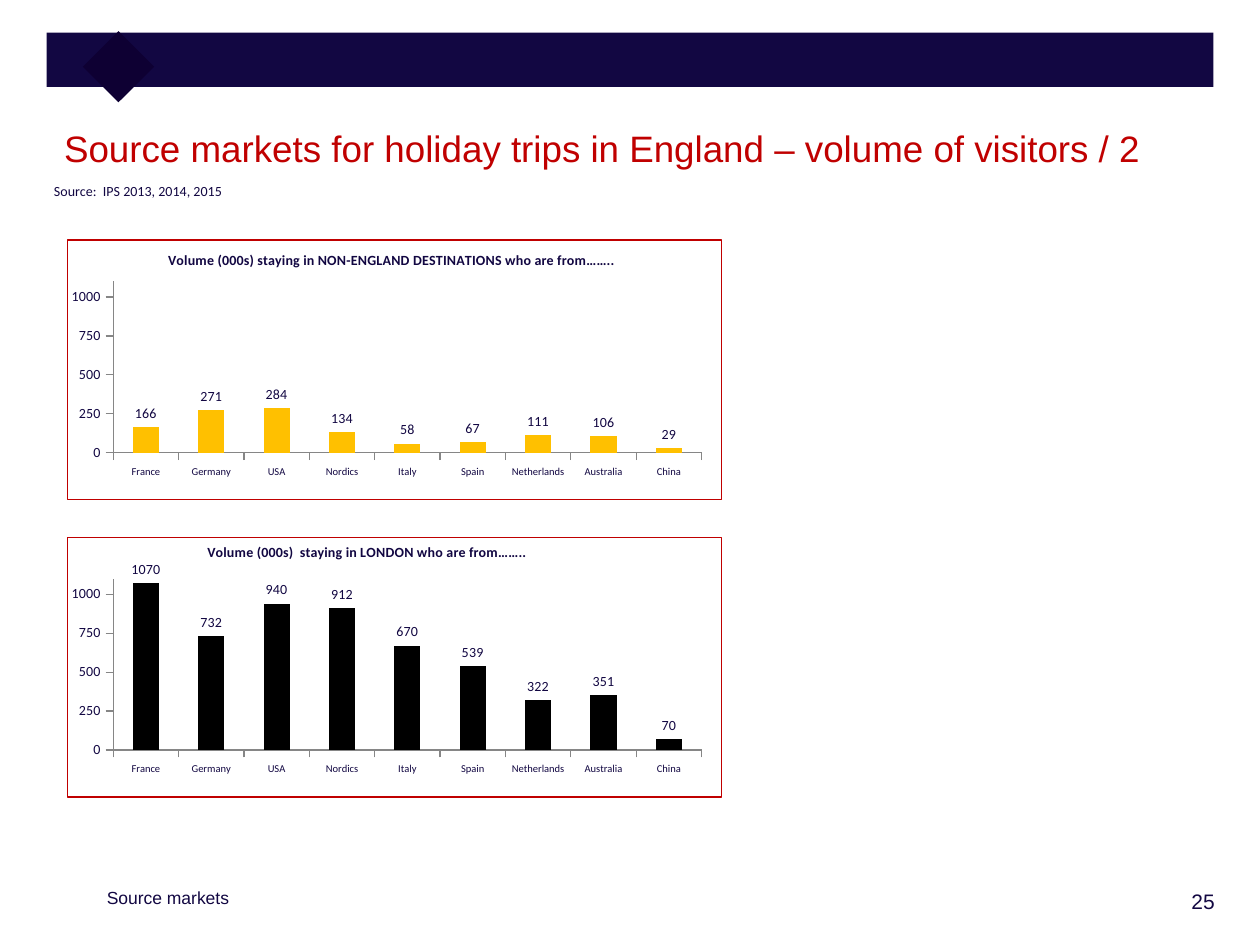
from lxml import etree
from pptx import Presentation
from pptx.chart.data import CategoryChartData
from pptx.dml.color import RGBColor
from pptx.enum import chart as charts, shapes, text
from pptx.oxml import parse_xml
from pptx.oxml.ns import nsdecls, qn
from pptx.util import Inches, Pt

NAVY = RGBColor(0x12, 0x07, 0x42)
DARK = RGBColor(0x0E, 0x00, 0x33)
RED = RGBColor(0xC0, 0x00, 0x00)
GOLD = RGBColor(0xFF, 0xC0, 0x00)
BLACK = RGBColor(0x00, 0x00, 0x00)
GREY = RGBColor(0x86, 0x86, 0x86)

LEFT, RIGHT = text.PP_ALIGN.LEFT, text.PP_ALIGN.RIGHT
TEXTS = [
    ("Source markets for holiday trips in England – volume of visitors / 2",
     (0.41, 0.95, 9.59, 0.61), 21, "Arial", RED, LEFT),
    ("Source:  IPS 2013, 2014, 2015", (0.33, 1.4, 1.59, 0.18), 8, "Calibri", NAVY, LEFT),
    ("Source markets", (0.75, 6.99, 2.67, 0.3), 10, "Arial", NAVY, LEFT),
    ("25", (8.53, 7, 1.21, 0.36), 12, "Arial", NAVY, RIGHT),
]
BANNER = [((0.37, 0.26, 9.26, 0.43), 0, NAVY), ((0.74, 0.33, 0.4, 0.4), 45, DARK)]

MARKETS = ["France", "Germany", "USA", "Nordics", "Italy", "Spain",
           "Netherlands", "Australia", "China"]
CHARTS = [
    ("Volume (000s) staying in NON-ENGLAND DESTINATIONS who are from……..", 1.9, GOLD,
     (0.15, 0.03), [166, 271, 284, 134, 58, 67, 111, 106, 29]),
    ("Volume (000s)  staying in LONDON who are from……..", 4.26, BLACK,
     (0.21, 0.01), [1070, 732, 940, 912, 670, 539, 322, 351, 70]),
]
PLOT = (0.07, 0.16, 0.9, 0.66)


def inches(box):
    return [Inches(length) for length in box]


def add_banner_shape(slide, box, rotation, color):
    shape = slide.shapes.add_shape(shapes.MSO_SHAPE.RECTANGLE, *inches(box))
    shape.shadow.inherit = False
    shape.rotation = rotation
    shape.fill.solid()
    shape.fill.fore_color.rgb = color
    shape.line.fill.background()


def add_text(slide, words, box, size, font_name, color, alignment):
    frame = slide.shapes.add_textbox(*inches(box)).text_frame
    frame.word_wrap = True
    paragraph = frame.paragraphs[0]
    paragraph.text = words
    paragraph.alignment = alignment
    paragraph.font.size = Pt(size)
    paragraph.font.name = font_name
    paragraph.font.color.rgb = color


def set_layout(element, position, inner=False):
    for old in element.findall(qn("c:layout")):
        element.remove(old)
    layout = etree.Element(qn("c:layout"))
    manual = etree.SubElement(layout, qn("c:manualLayout"))
    settings = [("layoutTarget", "inner")] if inner else []
    settings += [("xMode", "edge"), ("yMode", "edge")]
    settings += zip("xywh", position)
    for name, value in settings:
        etree.SubElement(manual, qn(f"c:{name}")).set("val", str(value))
    text_body = element.find(qn("c:tx"))
    if text_body is None:
        element.insert(0, layout)
    else:
        text_body.addnext(layout)


def set_border(chart):
    chart_space = chart.element
    chart_space.find(qn("c:chart")).addnext(parse_xml(
        f'<c:spPr {nsdecls("c", "a")}><a:noFill/><a:ln w="{Pt(0.75)}">'
        f'<a:solidFill><a:srgbClr val="{RED}"/></a:solidFill></a:ln></c:spPr>'))


def style_axis(axis, size):
    axis.has_major_gridlines = False
    axis.major_tick_mark = charts.XL_TICK_MARK.OUTSIDE
    axis.minor_tick_mark = charts.XL_TICK_MARK.NONE
    axis.format.line.color.rgb = GREY
    axis.format.line.width = Pt(0.75)
    axis.tick_labels.font.size = Pt(size)
    axis.tick_labels.font.color.rgb = NAVY


def add_volume_chart(slide, title, top, color, title_position, volumes):
    data = CategoryChartData(number_format="0")
    data.categories = MARKETS
    data.add_series("Series 1", volumes)
    chart = slide.shapes.add_chart(charts.XL_CHART_TYPE.COLUMN_CLUSTERED,
                                   *inches((0.53, top, 5.2, 2.07)), data).chart
    chart.has_legend = False
    chart.font.size = Pt(12)
    chart.font.name = "Calibri"
    chart.font.color.rgb = NAVY
    set_border(chart)

    chart.has_title = True
    paragraph = chart.chart_title.text_frame.paragraphs[0]
    paragraph.text = title
    paragraph.font.size = Pt(8)
    paragraph.font.bold = True
    paragraph.font.name = "Calibri"
    paragraph.font.color.rgb = NAVY
    chart.chart_title.include_in_layout = False
    set_layout(chart.element.find(".//" + qn("c:title")), title_position)
    set_layout(chart.element.find(".//" + qn("c:plotArea")), PLOT, inner=True)

    style_axis(chart.category_axis, 6)
    axis = chart.value_axis
    style_axis(axis, 8)
    axis.minimum_scale, axis.maximum_scale, axis.major_unit = 0, 1100, 250
    axis.tick_labels.number_format = "0"
    axis.tick_labels.number_format_is_linked = False

    plot = chart.plots[0]
    plot.gap_width = 150
    plot.vary_by_categories = False
    series = plot.series[0]
    series.format.fill.solid()
    series.format.fill.fore_color.rgb = color
    labels = series.data_labels
    labels.show_value = True
    labels.number_format = "0"
    labels.number_format_is_linked = False
    labels.position = charts.XL_LABEL_POSITION.OUTSIDE_END
    labels.font.size = Pt(8)
    labels.font.color.rgb = NAVY


def main():
    presentation = Presentation()
    presentation.slide_width, presentation.slide_height = Inches(10), Inches(7.5)
    slide = presentation.slides.add_slide(presentation.slide_layouts[6])
    for banner_shape in BANNER:
        add_banner_shape(slide, *banner_shape)
    for text_item in TEXTS:
        add_text(slide, *text_item)
    for volume_chart in CHARTS:
        add_volume_chart(slide, *volume_chart)
    presentation.save("out.pptx")


if __name__ == "__main__":
    main()
